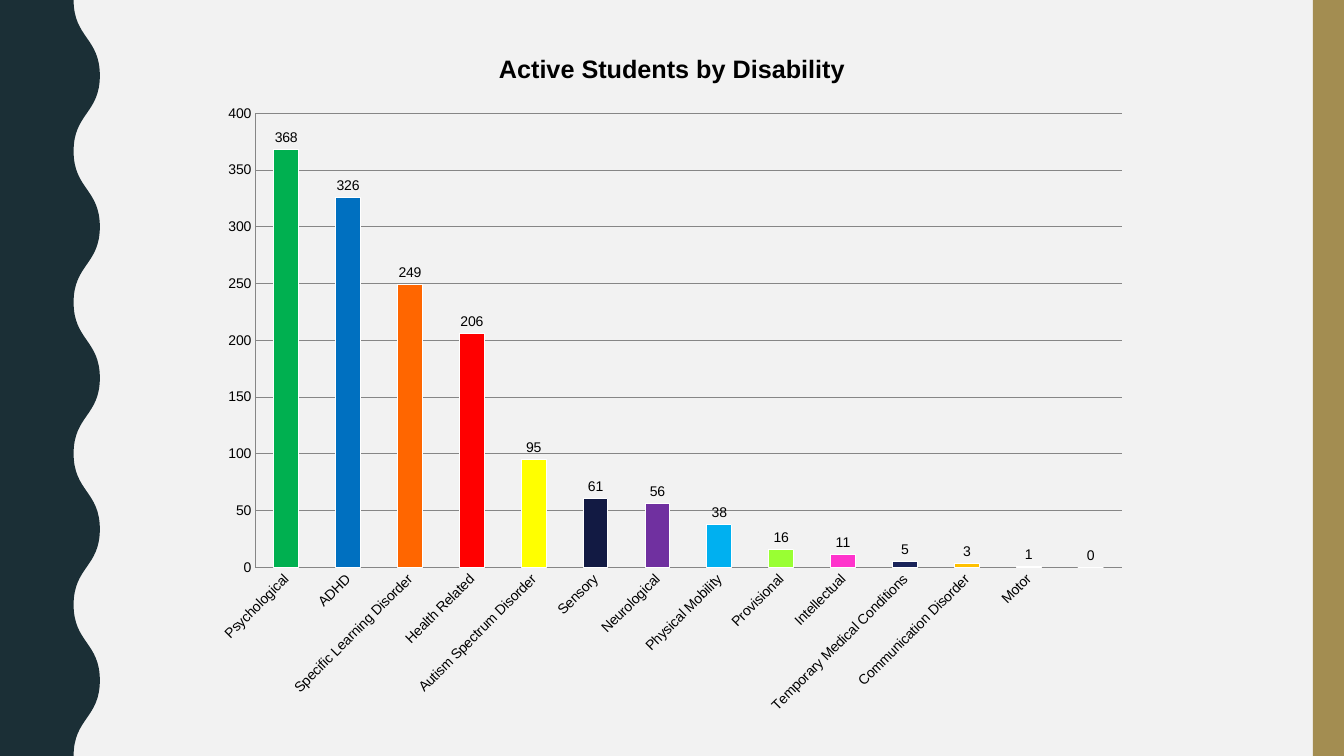
from dataclasses import dataclass

from lxml.etree import SubElement
from pptx import Presentation
from pptx.chart.data import CategoryChartData
from pptx.dml.color import RGBColor
from pptx.enum.chart import XL_CHART_TYPE as ChartType
from pptx.enum.chart import XL_LABEL_POSITION as LabelPos
from pptx.enum.chart import XL_TICK_MARK as Tick
from pptx.enum.shapes import MSO_SHAPE as Shape
from pptx.oxml.ns import qn
from pptx.util import Inches, Pt

COLORS = {
    "background": "F2F2F2", "wave": "1B2F36", "gold": "A38D51",
    "text": "000000", "outline": "FFFFFF", "grid": "868686",
}
UNITS = 1000
WAVE_LEFT, WAVE_RIGHT, HALF_WAVE, HALF_WAVES = 730, 990, 750, 10
SLIDE_W, SLIDE_H = 13.33, 7.5


@dataclass(frozen=True)
class Bar:
    label: str
    value: int
    color: str = ""


BARS = [
    Bar("Psychological", 368, "00B050"),
    Bar("ADHD", 326, "0070C0"),
    Bar("Specific Learning Disorder", 249, "FF6600"),
    Bar("Health Related", 206, "FF0000"),
    Bar("Autism Spectrum Disorder", 95, "FFFF00"),
    Bar("Sensory", 61, "121A43"),
    Bar("Neurological", 56, "7030A0"),
    Bar("Physical Mobility", 38, "00B0F0"),
    Bar("Provisional", 16, "99FF33"),
    Bar("Intellectual", 11, "FF33CC"),
    Bar("Temporary Medical Conditions", 5, "192359"),
    Bar("Communication Disorder", 3, "FFC000"),
    Bar("Motor", 1),
    Bar("", 0),
]


def paint(fill, color: str) -> None:
    fill.solid()
    fill.fore_color.rgb = RGBColor.from_string(color)


def finish(sp, color: str) -> None:
    sp.shadow.inherit = False
    paint(sp.fill, color)
    sp.line.fill.background()


def set_font(font, size: int, bold: bool = False) -> None:
    font.name, font.size, font.bold = "Arial", Pt(size), bold
    font.color.rgb = RGBColor.from_string(COLORS["text"])


def add_wave(slide) -> None:
    crests = [(WAVE_RIGHT if i % 2 else WAVE_LEFT, i * HALF_WAVE) for i in range(HALF_WAVES + 1)]
    builder = slide.shapes.build_freeform(*crests[0], scale=Inches(1) / UNITS)
    builder.add_line_segments(crests[1:] + [(0, HALF_WAVES * HALF_WAVE), (0, 0)], close=True)
    sp = builder.convert_to_shape()
    finish(sp, COLORS["wave"])
    lines = list(sp._element.iter(qn("a:lnTo")))
    for line, start, end in zip(lines, crests, crests[1:]):
        middle = (start[1] + end[1]) // 2
        curve = SubElement(line.getparent(), qn("a:cubicBezTo"))
        for x, y in ((start[0], middle), (end[0], middle), end):
            point = SubElement(curve, qn("a:pt"))
            point.set("x", str(x))
            point.set("y", str(y))
        line.getparent().replace(line, curve)


def set_layout(parent, index: int, target: str = "", **places: float) -> None:
    for old in parent.findall(qn("c:layout")):
        parent.remove(old)
    layout = SubElement(parent, qn("c:layout"))
    manual = SubElement(layout, qn("c:manualLayout"))
    if target:
        SubElement(manual, qn("c:layoutTarget")).set("val", target)
    for name in ("xMode", "yMode"):
        SubElement(manual, qn(f"c:{name}")).set("val", "edge")
    for name, value in places.items():
        SubElement(manual, qn(f"c:{name}")).set("val", str(value))
    parent.insert(index, layout)


def style_axis(axis) -> None:
    axis.major_tick_mark = axis.minor_tick_mark = Tick.NONE
    set_font(axis.tick_labels.font, 10)
    axis.format.line.width = Pt(0.75)
    paint(axis.format.line.fill, COLORS["grid"])


def add_disability_chart(slide) -> None:
    data = CategoryChartData()
    data.categories = [bar.label for bar in BARS]
    data.add_series("Series 1", [bar.value for bar in BARS])
    chart = slide.shapes.add_chart(
        ChartType.COLUMN_CLUSTERED, Inches(2.02), Inches(0.28), Inches(9.3), Inches(6.93), data
    ).chart
    set_font(chart.font, 10)
    chart.has_legend = False
    chart.has_title = True
    title = chart.chart_title
    p = title.text_frame.paragraphs[0]
    p.text = "Active Students by Disability"
    set_font(p.runs[0].font, 18, bold=True)
    title.include_in_layout = False
    set_layout(title._element, 1, x=0.31, y=0.0285)
    plot = chart.plots[0]
    set_layout(plot._element.getparent(), 0, "inner", x=0.055, y=0.122, w=0.924, h=0.65)

    for axis in (chart.category_axis, chart.value_axis):
        style_axis(axis)
    chart.category_axis._element.find(qn("c:txPr")).find(qn("a:bodyPr")).set("rot", "-2700000")
    values = chart.value_axis
    values.minimum_scale, values.maximum_scale, values.major_unit = 0, 400, 50
    values.has_major_gridlines = True
    grid = values.major_gridlines.format.line
    grid.width = Pt(0.75)
    paint(grid.fill, COLORS["grid"])

    plot.vary_by_categories = False
    plot.gap_width = 150
    plot.has_data_labels = True
    labels = plot.data_labels
    labels.show_value = True
    labels.position = LabelPos.OUTSIDE_END
    set_font(labels.font, 10)
    series = plot.series[0]
    colored = [(series.points[i], bar.color) for i, bar in enumerate(BARS) if bar.color]
    for item, color in [(series, COLORS["gold"]), *colored]:
        paint(item.format.fill, color)
        item.format.line.width = Pt(0.75)
        paint(item.format.line.fill, COLORS["outline"])


def main() -> None:
    """Build the slide of active students by disability."""
    prs = Presentation()
    prs.slide_width, prs.slide_height = Inches(SLIDE_W), Inches(SLIDE_H)
    slide = prs.slides.add_slide(prs.slide_layouts[6])
    paint(slide.background.fill, COLORS["background"])
    stripe = slide.shapes.add_shape(
        Shape.RECTANGLE, Inches(13.02), 0, Inches(0.31), Inches(SLIDE_H))
    finish(stripe, COLORS["gold"])
    add_wave(slide)
    add_disability_chart(slide)
    prs.save("out.pptx")


if __name__ == "__main__":
    main()
